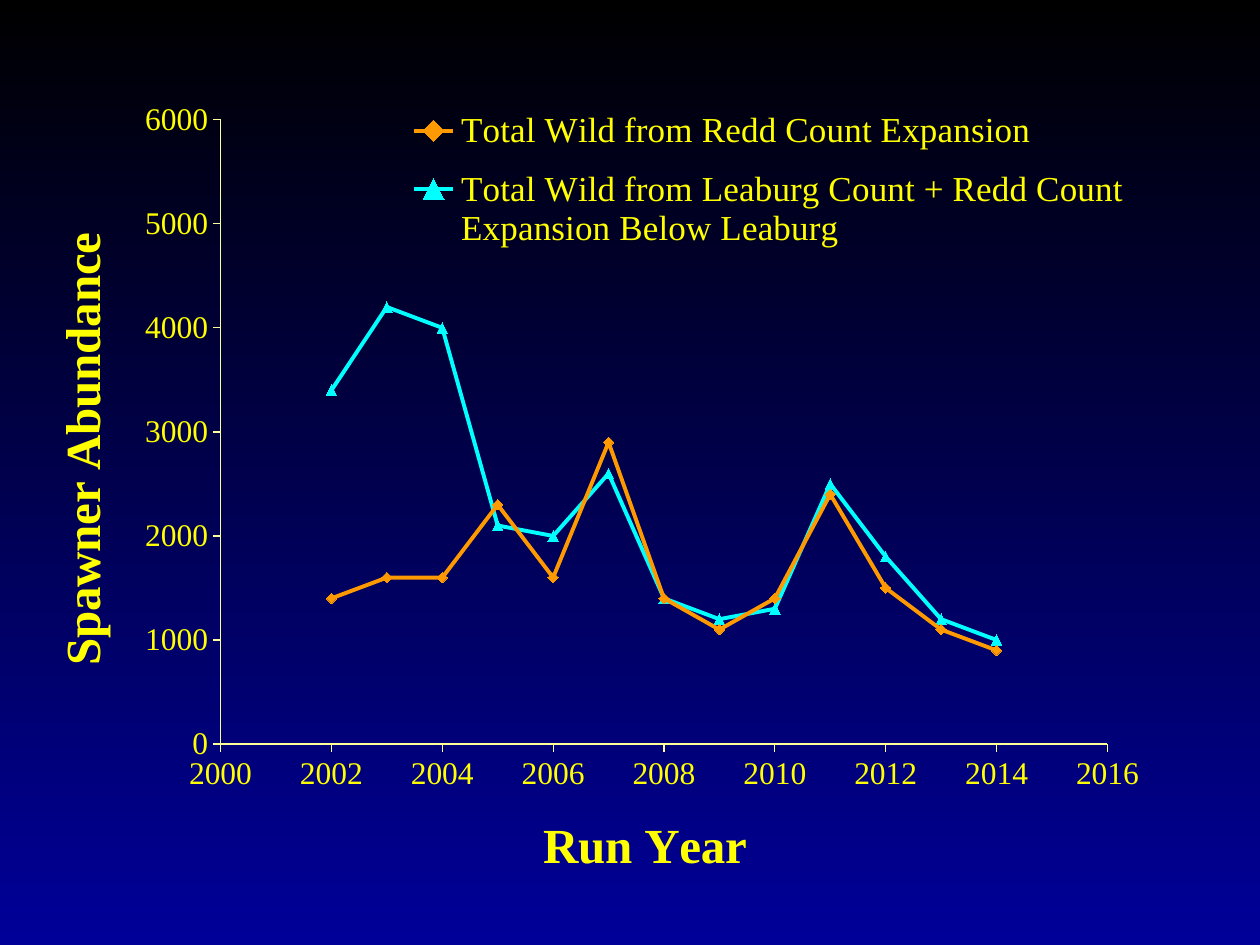
from lxml import etree
from pptx import Presentation
from pptx.chart.data import XyChartData
from pptx.dml.color import RGBColor
from pptx.enum.chart import (XL_CHART_TYPE, XL_LEGEND_POSITION,
                             XL_MARKER_STYLE, XL_TICK_LABEL_POSITION, XL_TICK_MARK)
from pptx.oxml.ns import qn
from pptx.util import Pt

SCATTER = XL_CHART_TYPE.XY_SCATTER_LINES
LEGEND_TOP = XL_LEGEND_POSITION.TOP
DIAMOND = XL_MARKER_STYLE.DIAMOND
TRIANGLE = XL_MARKER_STYLE.TRIANGLE
TICK_OUTSIDE = XL_TICK_MARK.OUTSIDE
TICK_NONE = XL_TICK_MARK.NONE
LABELS_LOW = XL_TICK_LABEL_POSITION.LOW

FONT = "Times New Roman"
COLORS = {
    "top": "000000",
    "bottom": "000099",
    "text": "FFFF00",
    "axis": "FFFF99",
    "redd": "FF9900",
    "leaburg": "00FFFF",
}
YEARS = range(2002, 2015)
SERIES = [
    ("Total Wild from Redd Count Expansion", "redd", DIAMOND,
     [1400, 1600, 1600, 2300, 1600, 2900, 1400, 1100, 1400, 2400, 1500, 1100, 900]),
    ("Total Wild from Leaburg Count + Redd Count Expansion Below Leaburg",
     "leaburg", TRIANGLE,
     [3400, 4200, 4000, 2100, 2000, 2600, 1400, 1200, 1300, 2500, 1800, 1200, 1000]),
]


def rgb(name):
    return RGBColor.from_string(COLORS[name])


def style_font(font, size, bold=False):
    font.name = FONT
    font.size = Pt(size)
    font.bold = bold
    font.color.rgb = rgb("text")


def set_layout(element, position, **values):
    """Place a chart part by fractions of the chart; position is its child index."""
    layout = element.find(qn("c:layout"))
    if layout is not None:
        element.remove(layout)
    layout = etree.Element(qn("c:layout"))
    manual = etree.SubElement(layout, qn("c:manualLayout"))
    for key, value in values.items():
        etree.SubElement(manual, qn(f"c:{key}")).set("val", str(value))
    element.insert(position, layout)


def paint_background(slide):
    fill = slide.background.fill
    fill.gradient()
    fill.gradient_angle = 270
    for stop, name, place in zip(fill.gradient_stops, ("top", "bottom"), (0, 1)):
        stop.color.rgb = rgb(name)
        stop.position = place


def style_axis(axis, title, low, high, step, x, y, rotation):
    axis.minimum_scale, axis.maximum_scale, axis.major_unit = low, high, step
    axis.has_major_gridlines = False
    axis.major_tick_mark = TICK_OUTSIDE
    axis.minor_tick_mark = TICK_NONE
    axis.tick_label_position = LABELS_LOW
    axis.tick_labels.number_format = "0"
    axis.tick_labels.number_format_is_linked = False
    style_font(axis.tick_labels.font, 18)
    axis.format.line.color.rgb = rgb("axis")
    axis.format.line.width = Pt(0.75)
    frame = axis.axis_title.text_frame
    frame.text = title
    style_font(frame.paragraphs[0].runs[0].font, 28, bold=True)
    body = frame._txBody.find(qn("a:bodyPr"))
    body.set("rot", str(rotation * 60000))
    body.set("vert", "horz")
    set_layout(axis.axis_title._element, 1, xMode="edge", yMode="edge", x=x, y=y)


def style_series(series, color, marker):
    series.smooth = False
    series.format.line.color.rgb = rgb(color)
    series.format.line.width = Pt(2.25)
    series.marker.style = marker
    series.marker.size = 6
    series.marker.format.fill.solid()
    series.marker.format.fill.fore_color.rgb = rgb(color)
    series.marker.format.line.color.rgb = rgb(color)


def add_legend(chart):
    chart.has_legend = True
    legend = chart.legend
    legend.position = LEGEND_TOP
    legend.include_in_layout = False
    style_font(legend.font, 20)
    set_layout(legend._element, 1, xMode="edge", yMode="edge",
               x=0.31, y=0.08, w=0.65, h=0.2)


def add_abundance_chart(slide, left, top, width, height):
    data = XyChartData()
    for name, _, _, counts in SERIES:
        points = data.add_series(name)
        for year, count in zip(YEARS, counts):
            points.add_data_point(year, count)
    chart = slide.shapes.add_chart(
        SCATTER, Pt(left), Pt(top), Pt(width), Pt(height), data).chart
    chart.has_title = False
    style_font(chart.font, 10)
    plot = chart.plots[0]
    plot.vary_by_categories = False
    for series, (_, color, marker, _) in zip(plot.series, SERIES):
        style_series(series, color, marker)
    style_axis(chart.category_axis, "Run Year", 2000, 2016, 2, 0.43, 0.89, 0)
    style_axis(chart.value_axis, "Spawner Abundance", 0, 6000, 1000, 0, 0.23, -90)
    add_legend(chart)
    plot_area = chart._chartSpace.find(f".//{qn('c:plotArea')}")
    set_layout(plot_area, 0, layoutTarget="inner", xMode="edge", yMode="edge",
               x=0.156, y=0.112, w=0.775, h=0.708)


def main():
    presentation = Presentation()
    presentation.slide_width = Pt(720)
    presentation.slide_height = Pt(540)
    slide = presentation.slides.add_slide(presentation.slide_layouts[6])
    paint_background(slide)
    add_abundance_chart(slide, 24, 12, 654, 504)
    presentation.save("out.pptx")


if __name__ == "__main__":
    main()
